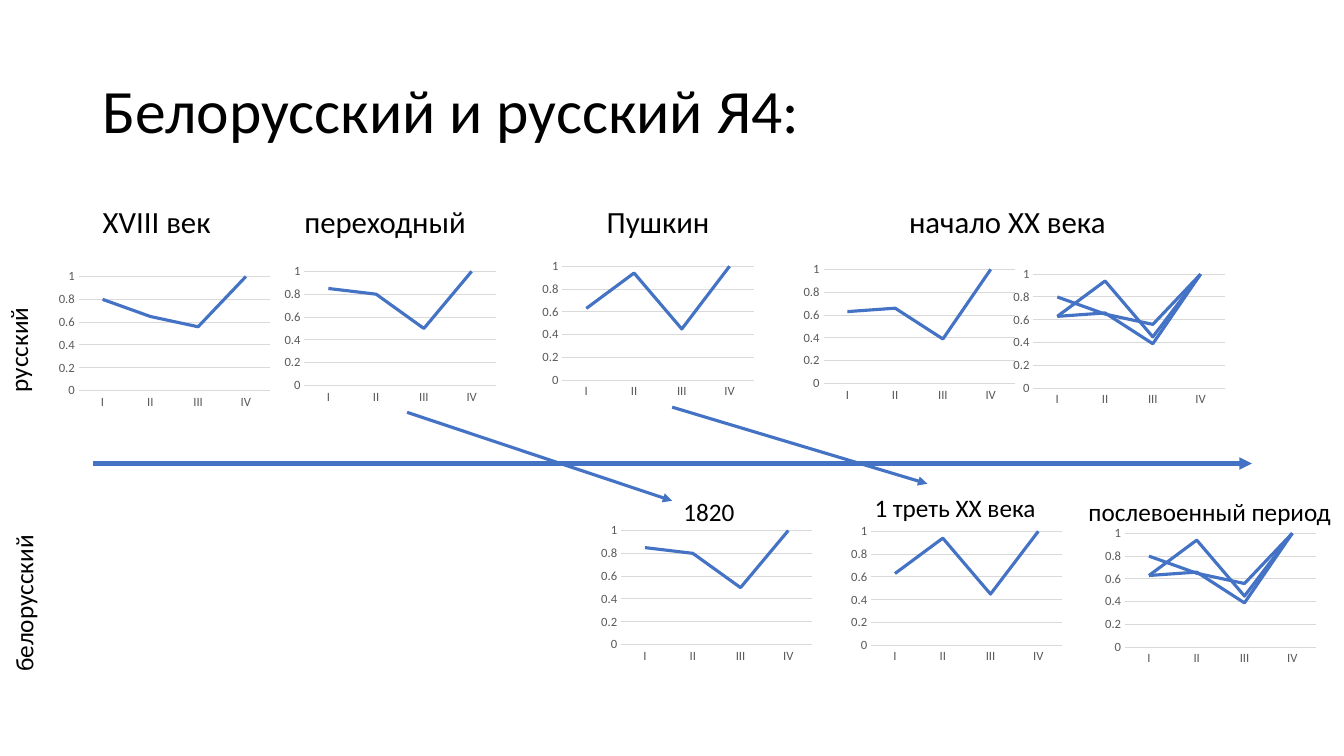
from dataclasses import dataclass

from lxml.etree import SubElement
from pptx import Presentation
from pptx.chart.data import CategoryChartData
from pptx.dml.color import RGBColor
from pptx.enum.chart import XL_CHART_TYPE, XL_TICK_MARK
from pptx.enum.shapes import MSO_CONNECTOR
from pptx.enum.text import MSO_ANCHOR, MSO_AUTO_SIZE
from pptx.oxml.ns import qn
from pptx.util import Cm, Pt


@dataclass(frozen=True)
class Theme:
    font: str = "Calibri"
    ink: RGBColor = RGBColor(0x00, 0x00, 0x00)
    blue: RGBColor = RGBColor(0x44, 0x72, 0xC4)
    grid: RGBColor = RGBColor(0xD9, 0xD9, 0xD9)
    muted: RGBColor = RGBColor(0x59, 0x59, 0x59)
    title: Pt = Pt(44)
    head: Pt = Pt(22)
    label: Pt = Pt(18)
    chart: Pt = Pt(10)
    tick: Pt = Pt(9)
    hair: Pt = Pt(0.75)
    curve: Pt = Pt(2.25)
    axis: Pt = Pt(3)


THEME = Theme()
FEET = ("I", "II", "III", "IV")
OLD = (0.8, 0.65, 0.56, 1)
SHIFT = (0.85, 0.8, 0.5, 1)
POET = (0.63, 0.94, 0.45, 1)
LATE = (0.63, 0.66, 0.39, 1)
MIXED = (POET, OLD, LATE)

PLOTS = (
    (1.37, 6.71, XL_CHART_TYPE.LINE_STACKED, (OLD,)),
    (7.06, 6.58, XL_CHART_TYPE.LINE_STACKED, (SHIFT,)),
    (13.56, 6.45, XL_CHART_TYPE.LINE, (POET,)),
    (20.14, 6.53, XL_CHART_TYPE.LINE, (LATE,)),
    (25.43, 6.65, XL_CHART_TYPE.LINE, MIXED),
    (15.04, 13.11, XL_CHART_TYPE.LINE_STACKED, (SHIFT,)),
    (21.34, 13.13, XL_CHART_TYPE.LINE, (POET,)),
    (27.74, 13.18, XL_CHART_TYPE.LINE, MIXED),
)
ERAS = (
    ("1820", 16.97, 12.37, 1.8),
    ("1 треть ХХ века", 21.79, 12.27, 4.62),
    ("послевоенный период", 27.18, 12.37, 6.71),
)
SIDES = (
    ("русский", -0.05, 7.72, 2.41),
    ("белорусский", 0.08, 13.44, 3.73),
)
ARROWS = (
    (2.34, 11.68, 31.55, 11.68, THEME.axis),
    (10.26, 10.39, 16.94, 12.62, THEME.curve),
    (16.94, 10.26, 23.37, 12.19, THEME.curve),
)


def style(font, size, color):
    font.name = THEME.font
    font.size = size
    font.color.rgb = color


def add_text(slide, text, left, top, width, height, size, wrap=True):
    box = slide.shapes.add_textbox(Cm(left), Cm(top), Cm(width), Cm(height))
    frame = box.text_frame
    frame.text = text
    frame.word_wrap = wrap
    frame.auto_size = MSO_AUTO_SIZE.NONE if wrap else MSO_AUTO_SIZE.SHAPE_TO_FIT_TEXT
    for run in frame.paragraphs[0].runs:
        style(run.font, size, THEME.ink)
    return box


def add_title(slide):
    box = add_text(slide, "Белорусский и русский Я4:", 2.34, 1.02, 29.21, 3.68, THEME.title)
    box.text_frame.vertical_anchor = MSO_ANCHOR.MIDDLE
    box.text_frame.paragraphs[0].line_spacing = 0.9


def add_heads(slide):
    text = "XVIII век\tпереходный\tПушкин\tначало ХХ века"
    box = add_text(slide, text, 2.34, 5.08, 30.94, 12.09, THEME.head)
    line = box.text_frame.paragraphs[0]
    line.line_spacing = 0.9
    line.space_before = Pt(10)
    props = box.element.find(".//" + qn("a:pPr"))
    stops = SubElement(props, qn("a:tabLst"))
    for stop in (5.08, 12.7, 20.32):
        SubElement(stops, qn("a:tab"), pos=str(Cm(stop)), algn="l")


def add_side(slide, text, left, top, height):
    box = add_text(slide, text, left, top, 1.27, height, THEME.label, wrap=False)
    box.element.find(".//" + qn("a:bodyPr")).set("vert", "vert270")


def add_plot(slide, left, top, kind, curves):
    data = CategoryChartData()
    data.categories = FEET
    for index, curve in enumerate(curves, 1):
        data.add_series(f"Series {index}", curve)
    frame = slide.shapes.add_chart(kind, Cm(left), Cm(top), Cm(5.54), Cm(3.68), data)
    chart = frame.chart
    chart.has_legend = False
    chart.has_title = False
    style(chart.font, THEME.chart, THEME.ink)
    for axis in (chart.category_axis, chart.value_axis):
        axis.major_tick_mark = XL_TICK_MARK.NONE
        axis.minor_tick_mark = XL_TICK_MARK.NONE
        style(axis.tick_labels.font, THEME.tick, THEME.muted)
    base = chart.category_axis.format.line
    scale = chart.value_axis
    scale.minimum_scale, scale.maximum_scale, scale.major_unit = 0, 1, 0.2
    scale.format.line.fill.background()
    for line in (base, scale.major_gridlines.format.line):
        line.color.rgb = THEME.grid
        line.width = THEME.hair
    plot = chart.plots[0]
    plot.vary_by_categories = False
    for series in plot.series:
        series.smooth = False
        series.format.line.color.rgb = THEME.blue
        series.format.line.width = THEME.curve


def add_arrow(slide, left, top, right, foot, width):
    arrow = slide.shapes.add_connector(
        MSO_CONNECTOR.STRAIGHT, Cm(left), Cm(top), Cm(right), Cm(foot)
    )
    arrow.line.color.rgb = THEME.blue
    arrow.line.width = width
    props = arrow.element.spPr
    SubElement(props.find(qn("a:ln")), qn("a:tailEnd"), type="triangle")
    SubElement(props, qn("a:effectLst"))


def main():
    deck = Presentation()
    deck.slide_width, deck.slide_height = Cm(33.87), Cm(19.05)
    slide = deck.slides.add_slide(deck.slide_layouts[6])
    add_title(slide)
    add_heads(slide)
    for plot in PLOTS:
        add_plot(slide, *plot)
    for side in SIDES:
        add_side(slide, *side)
    for text, left, top, width in ERAS:
        add_text(slide, text, left, top, width, 1.02, THEME.label, wrap=False)
    for arrow in ARROWS:
        add_arrow(slide, *arrow)
    deck.save("out.pptx")


if __name__ == "__main__":
    main()
